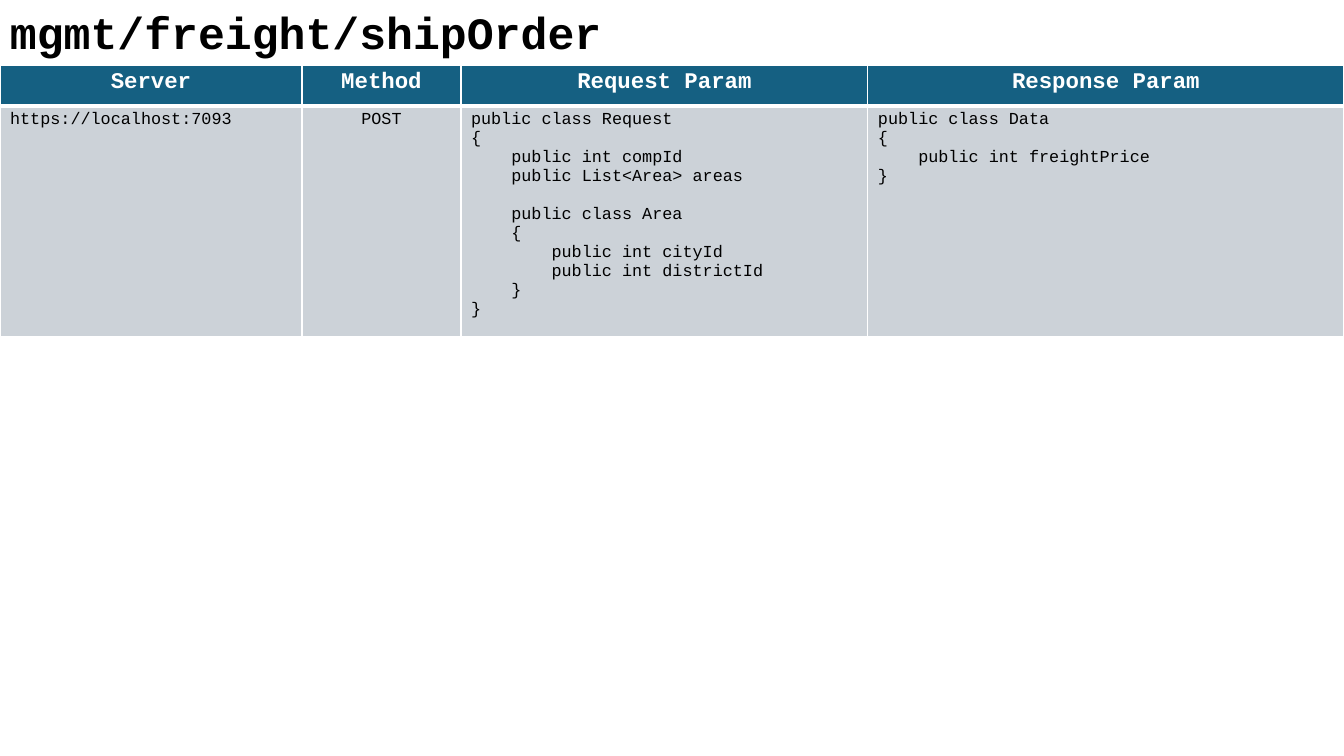
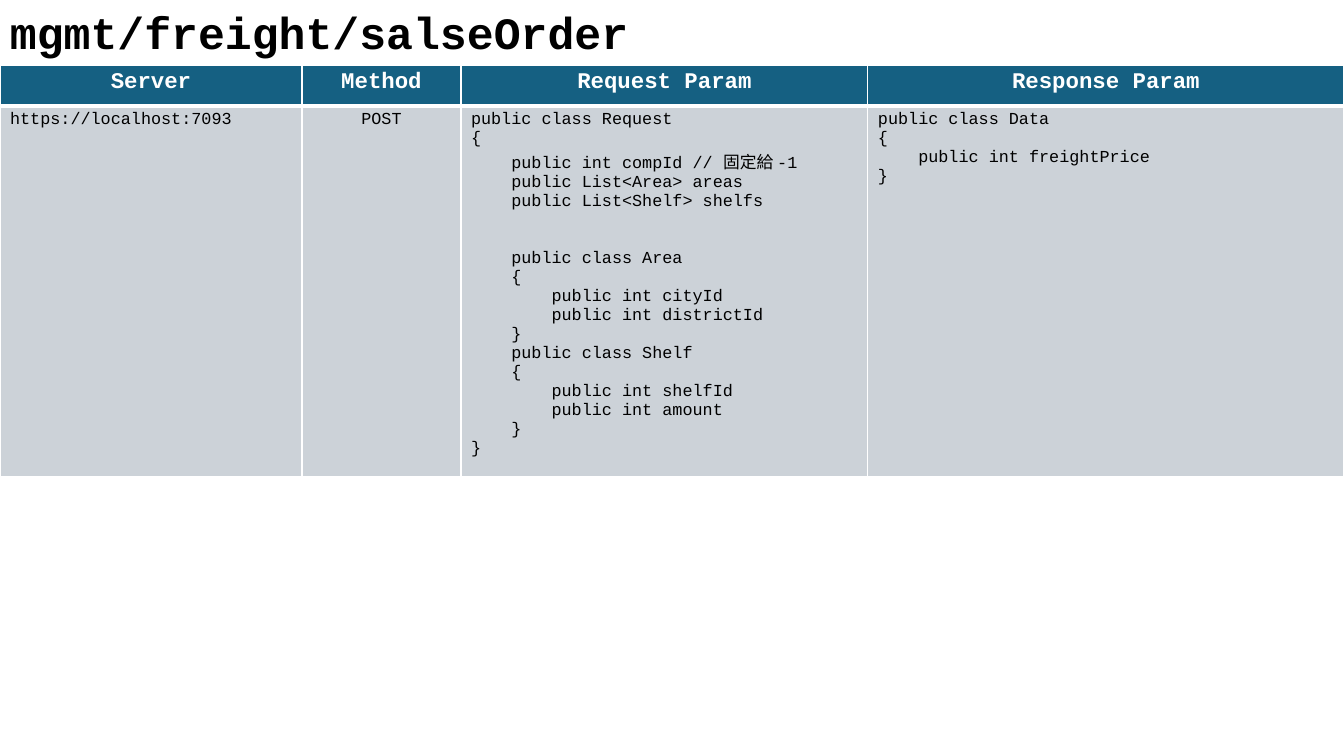
from lxml.etree import SubElement
from pptx import Presentation
from pptx.dml.color import RGBColor
from pptx.enum.text import MSO_AUTO_SIZE as Fit, PP_ALIGN as Align
from pptx.oxml.ns import qn
from pptx.util import Pt

PX = 914400 / 100.8
WIDE, HIGH = 1344, 756
TOP = 65
HEAD = 41
LINE = 19
PAD = 10
COLS = [302, 159, 407, 476]
HEADS = ["Server", "Method", "Request Param", "Response Param"]
SERVER = "https://localhost:7093"
DATA = """public class Data
{
    public int freightPrice
}"""
SHIP = """public class Request
{
    public int compId
    public List<Area> areas

    public class Area
    {
        public int cityId
        public int districtId
    }
}"""
SALES = """public class Request
{
    public int compId // 固定給 -1
    public List<Area> areas
    public List<Shelf> shelfs


    public class Area
    {
        public int cityId
        public int districtId
    }
    public class Shelf
    {
        public int shelfId
        public int amount
    }
}"""


def px(n):
    return round(n * PX)


def rgb(text):
    return RGBColor.from_string(text)


class Deck:
    FONT = "Courier New"
    INK, WHITE = "000000", "FFFFFF"
    BLUE, GRAY = "156082", "CCD2D8"

    def __init__(self):
        self.prs = Presentation()
        self.prs.slide_width, self.prs.slide_height = px(WIDE), px(HIGH)
        self.slide = None

    def page(self, title):
        self.slide = self.prs.slides.add_slide(self.prs.slide_layouts[6])
        box = self.slide.shapes.add_textbox(0, 0, px(644), px(TOP))
        frame = box.text_frame
        frame.word_wrap = True
        frame.auto_size = Fit.SHAPE_TO_FIT_TEXT
        self.text(frame, title, 32, self.INK, True)

    def text(self, frame, text, size, color, bold=False, align=Align.LEFT):
        """Write one paragraph a line; empty lines become space before the next."""
        para, gap = frame.paragraphs[0], 0
        for i, line in enumerate(text.split("\n")):
            if not line:
                gap += LINE
                continue
            if i:
                para = frame.add_paragraph()
            if gap:
                para.space_before = px(gap)
                gap = 0
            para.alignment = align
            run = para.add_run()
            run.text = line
            font = run.font
            font.name, font.size, font.bold = self.FONT, Pt(size), bold
            font.color.rgb = rgb(color)

    def edges(self, cell, top, base):
        """Draw white cell borders, top and base widths in points."""
        props = cell._tc.get_or_add_tcPr()
        for side, width in zip("LRTB", (1, 1, top, base)):
            edge = SubElement(props, qn(f"a:ln{side}"), w=str(Pt(width)))
            fill = SubElement(edge, qn("a:solidFill"))
            SubElement(fill, qn("a:srgbClr"), val=self.WHITE)

    def cell(self, cell, text, head, align):
        self.edges(cell, *((1, 3) if head else (3, 1)))
        cell.fill.solid()
        cell.fill.fore_color.rgb = rgb(self.BLUE if head else self.GRAY)
        size, color = (16, self.WHITE) if head else (12, self.INK)
        self.text(cell.text_frame, text, size, color, head, align)

    def table(self, values):
        lines = max(len(text.split("\n")) for text in values)
        body = lines * LINE + PAD
        table = self.slide.shapes.add_table(
            2, len(COLS), 0, px(TOP), px(WIDE), px(HEAD + body)).table
        table.horz_banding = False
        for col, wide in zip(table.columns, COLS):
            col.width = px(wide)
        for row, high in zip(table.rows, (HEAD, body)):
            row.height = px(high)
        for c, (name, value) in enumerate(zip(HEADS, values)):
            align = Align.CENTER if name == "Method" else Align.LEFT
            self.cell(table.cell(0, c), name, True, Align.CENTER)
            self.cell(table.cell(1, c), value, False, align)


def main():
    deck = Deck()
    for name, request in (("shipOrder", SHIP), ("salseOrder", SALES)):
        deck.page(f"mgmt/freight/{name}")
        deck.table([SERVER, "POST", request, DATA])
    deck.prs.save("out.pptx")


if __name__ == "__main__":
    main()
